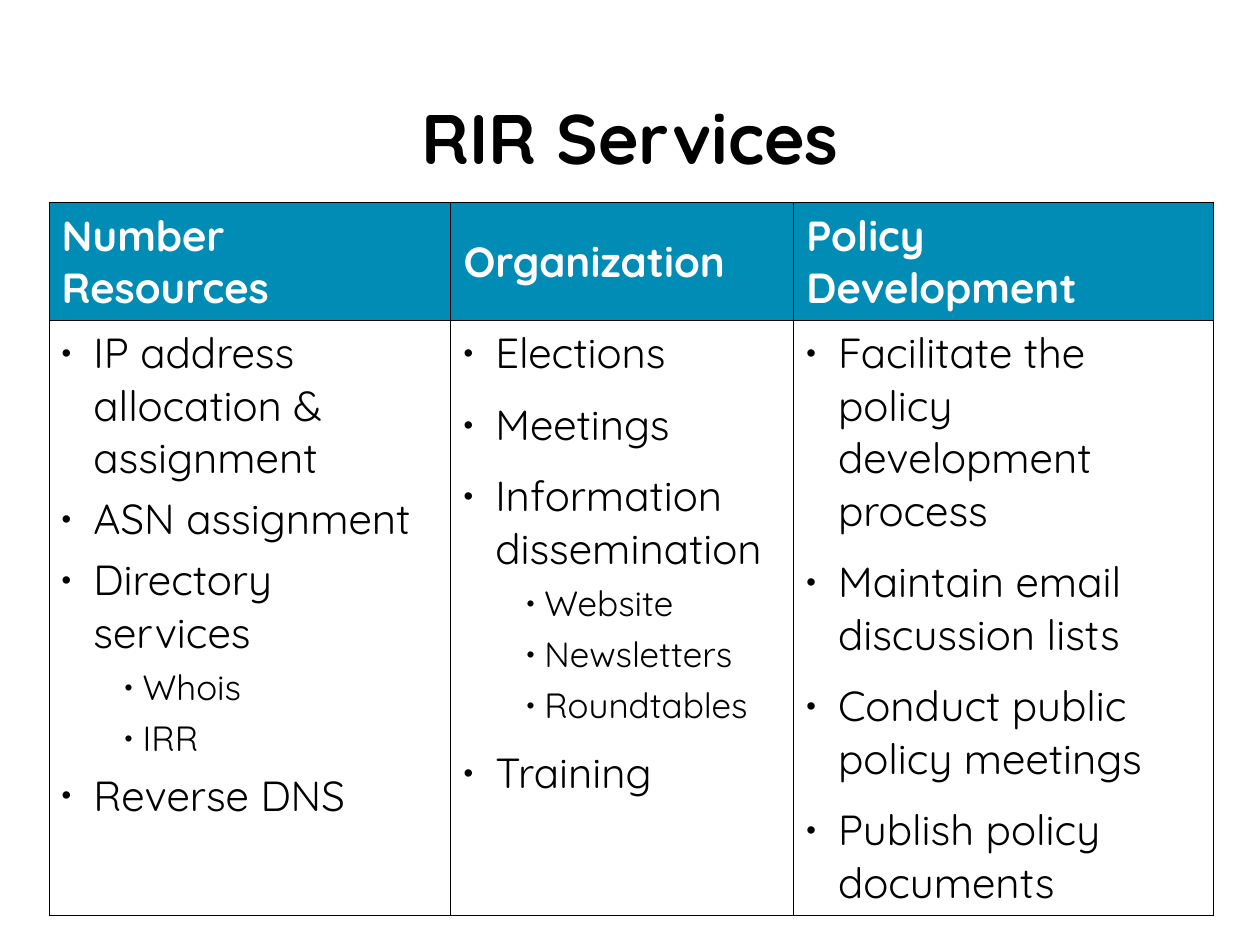
"""Build the RIR Services slide: a title above a three-column table."""
from lxml.etree import SubElement
from pptx import Presentation
from pptx.dml.color import RGBColor
from pptx.enum.text import MSO_ANCHOR, PP_ALIGN
from pptx.oxml import parse_xml
from pptx.oxml.ns import nsdecls, qn
from pptx.util import Cm, Pt

TITLE = "RIR Services"
HEADS = ["Number Resources", "Organization", "Policy Development"]
LISTS = [
    [("IP address allocation & assignment", 0, 0),
     ("ASN assignment", 0, 0),
     ("Directory services", 0, 0),
     ("Whois", 1, 0),
     ("IRR", 1, 0),
     ("Reverse DNS", 0, 0)],
    [("Elections", 0, 6),
     ("Meetings", 0, 6),
     ("Information dissemination", 0, 0),
     ("Website", 1, 0),
     ("Newsletters", 1, 0),
     ("Roundtables", 1, 6),
     ("Training", 0, 0)],
    [("Facilitate the policy development process", 0, 6),
     ("Maintain email discussion lists", 0, 6),
     ("Conduct public policy meetings", 0, 6),
     ("Publish policy documents", 0, 6)],
]

THEME = {
    "font": "Quicksand", "title": 40, "head": 24, "levels": (24, 20),
    "dark": "000000", "light": "FFFFFF", "band": "008CB5", "line": 0.75,
}
PLACE = {"left": Cm(0), "top": Cm(1.17), "width": Cm(25.4), "height": Cm(3.18)}
COLS = [Cm(8.1), Cm(6.91), Cm(8.46)]
ROWS = [Cm(2.36), Cm(11.99)]
DENTS = [(Cm(0.64), Cm(-0.64)), (Cm(1.63), Cm(-0.36))]


def write(para, text, size, color, bold):
    run = para.add_run()
    run.text = text
    look = {"name": THEME["font"], "size": Pt(size), "bold": bold}
    for key, value in look.items():
        setattr(run.font, key, value)
    run.font.color.rgb = RGBColor.from_string(color)


def border(cell):
    props = cell._tc.get_or_add_tcPr()
    for spot, side in enumerate(("lnL", "lnR", "lnT", "lnB")):
        props.insert(spot, parse_xml(
            f'<a:{side} {nsdecls("a")} w="{Pt(THEME["line"])}"><a:solidFill>'
            f'<a:srgbClr val="{THEME["dark"]}"/></a:solidFill></a:{side}>'))


def bullet(para, level):
    para.level = level
    props = para._p.get_or_add_pPr()
    margin, indent = DENTS[level]
    props.set("marL", str(margin))
    props.set("indent", str(indent))
    SubElement(props, qn("a:buSzPct")).set("val", "65000")
    SubElement(props, qn("a:buFont")).set("typeface", "Arial")
    SubElement(props, qn("a:buChar")).set("char", "•")


def fill_head(cell, text):
    cell.fill.solid()
    cell.fill.fore_color.rgb = RGBColor.from_string(THEME["band"])
    cell.vertical_anchor = MSO_ANCHOR.MIDDLE
    write(cell.text_frame.paragraphs[0], text, THEME["head"], THEME["light"], True)
    border(cell)


def fill_list(cell, items):
    cell.fill.background()
    frame = cell.text_frame
    for spot, (text, level, after) in enumerate(items):
        para = frame.add_paragraph() if spot else frame.paragraphs[0]
        size = THEME["levels"][level]
        bullet(para, level)
        para.space_before = Pt(0.2 * size if spot else 0)
        para.space_after = Pt(after)
        write(para, text, size, THEME["dark"], False)
    border(cell)


def main():
    deck = Presentation()
    deck.slide_width, deck.slide_height = Cm(25.4), Cm(19.05)
    slide = deck.slides.add_slide(deck.slide_layouts[5])

    title = slide.shapes.title
    for key, value in PLACE.items():
        setattr(title, key, value)
    title.text_frame.vertical_anchor = MSO_ANCHOR.MIDDLE
    para = title.text_frame.paragraphs[0]
    para.alignment = PP_ALIGN.CENTER
    write(para, TITLE, THEME["title"], THEME["dark"], True)

    table = slide.shapes.add_table(
        len(ROWS), len(COLS), Cm(0.99), Cm(4.09), sum(COLS), sum(ROWS)).table
    table.first_row = table.horz_banding = False
    for row, height in zip(table.rows, ROWS):
        row.height = height
    for spot, (width, head, items) in enumerate(zip(COLS, HEADS, LISTS)):
        table.columns[spot].width = width
        fill_head(table.cell(0, spot), head)
        fill_list(table.cell(1, spot), items)

    deck.save("out.pptx")


if __name__ == "__main__":
    main()
